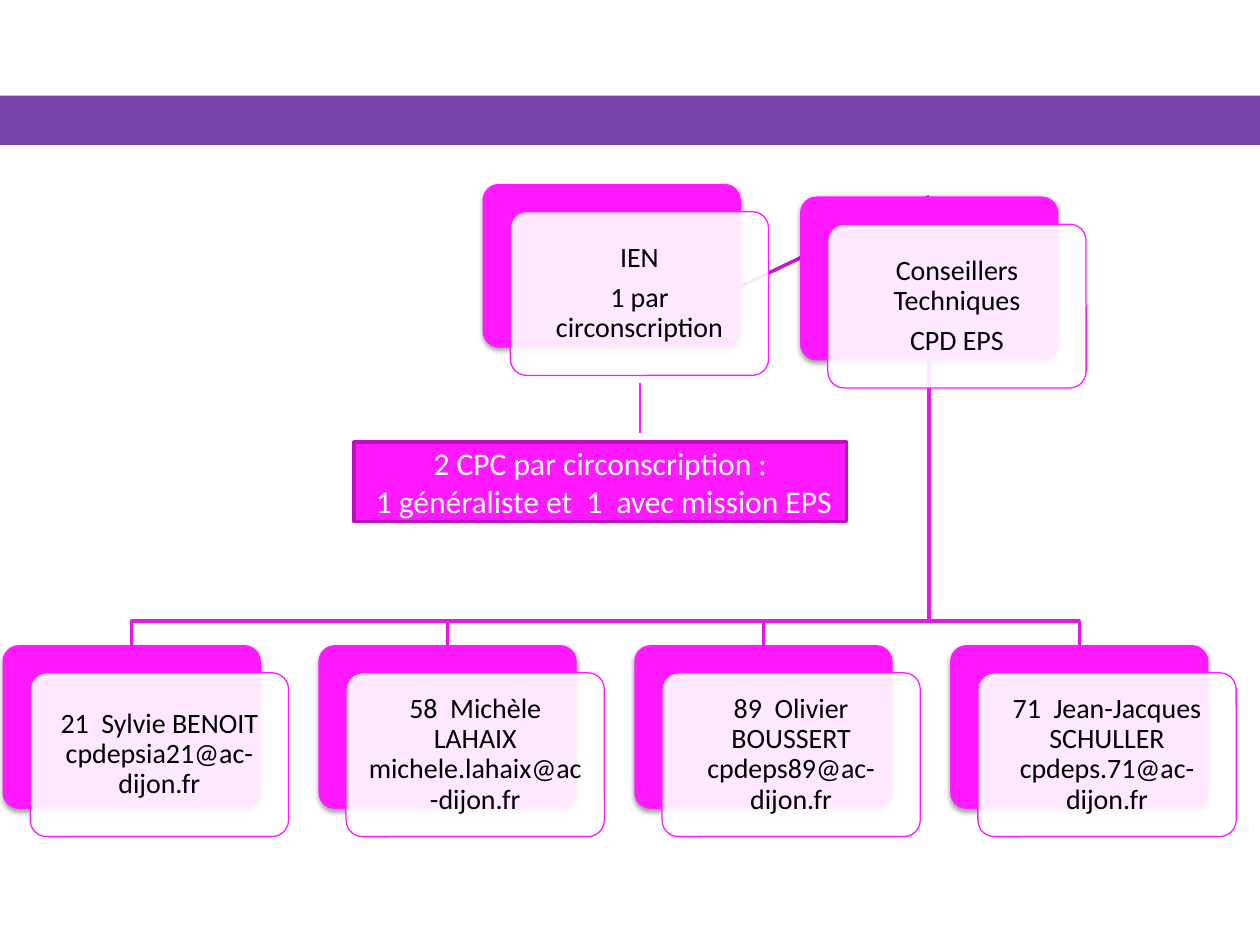
from lxml.etree import SubElement
from pptx import Presentation
from pptx.dml.color import RGBColor
from pptx.enum.shapes import MSO_CONNECTOR, MSO_SHAPE
from pptx.enum.text import MSO_ANCHOR, PP_ALIGN
from pptx.oxml.ns import qn
from pptx.util import Inches, Pt

WIDTH, HEIGHT = 10, 7.5
CARD_WIDTH, CARD_HEIGHT = 2.05, 1.3
CARD_SHIFT = 0.22
COLUMN_LEFT, COLUMN_STEP = 0.02, 2.507
MEMBER_TOP, BUS_TOP = 5.12, 4.93
INSPECTOR_BOX = (3.83, 1.46, CARD_WIDTH, CARD_HEIGHT)
ADVISER_BOX = (6.35, 1.56, CARD_WIDTH, CARD_HEIGHT)
MAGENTA = "FE19FF"
INSPECTOR = ["IEN", "1 par circonscription"]
ADVISER = ["Conseillers Techniques", "CPD EPS"]
MISSION = ["2 CPC par circonscription :", " 1 généraliste et  1  avec mission EPS"]
MEMBERS = [
    "21  Sylvie BENOIT\ncpdepsia21@ac-dijon.fr",
    "58  Michèle LAHAIX\nmichele.lahaix@ac-dijon.fr",
    "89  Olivier BOUSSERT\ncpdeps89@ac-dijon.fr",
    "71  Jean-Jacques SCHULLER\ncpdeps.71@ac-dijon.fr",
]


def colour(value):
    """Turn a hex string into a colour."""
    return RGBColor.from_string(value)


def set_line(shape, value, width):
    """Give a shape or connector a solid line."""
    shape.line.color.rgb = colour(value)
    shape.line.width = Pt(width)


def add_block(page, kind, box, fill, line=None, width=0.75):
    """Add a filled preset shape without a shadow."""
    block = page.shapes.add_shape(kind, *map(Inches, box))
    block.shadow.inherit = False
    block.fill.solid()
    block.fill.fore_color.rgb = colour(fill)
    if line:
        set_line(block, line, width)
    else:
        block.line.fill.background()
    if kind == MSO_SHAPE.ROUNDED_RECTANGLE:
        block.adjustments[0] = 0.1
    return block


def add_shadow(shape):
    """Add a soft shadow below a shape."""
    effects = shape.element.spPr.find(qn("a:effectLst"))
    shadow = SubElement(effects, qn("a:outerShdw"), blurRad=str(Pt(3.1)), dist=str(Pt(1.6)),
                        dir="5400000", rotWithShape="0")
    black = SubElement(shadow, qn("a:srgbClr"), val="000000")
    SubElement(black, qn("a:alpha"), val="38000")


def write(shape, lines, size, value, spacing=None, after=None):
    """Fill a shape with centred paragraphs."""
    frame = shape.text_frame
    frame.word_wrap = True
    frame.vertical_anchor = MSO_ANCHOR.MIDDLE
    for index, line in enumerate(lines):
        para = frame.paragraphs[0] if index == 0 else frame.add_paragraph()
        para.text = line
        para.alignment = PP_ALIGN.CENTER
        para.line_spacing = spacing
        para.space_after = after
        for span in para.runs:
            span.font.name = "Calibri"
            span.font.size = Pt(size)
            span.font.color.rgb = colour(value)
        for line_break in para._p.findall(qn("a:br")):
            SubElement(line_break, qn("a:rPr"), sz=str(size * 100))


def add_card(page, box, lines):
    """Add a magenta plate with a translucent text card in front."""
    left, top, width, height = box
    add_shadow(add_block(page, MSO_SHAPE.ROUNDED_RECTANGLE, box, MAGENTA))
    front_box = (left + CARD_SHIFT, top + CARD_SHIFT, width, height)
    front = add_block(page, MSO_SHAPE.ROUNDED_RECTANGLE, front_box, "FFFFFF", MAGENTA)
    fill = front.element.spPr.find(qn("a:solidFill"))
    SubElement(fill[0], qn("a:alpha"), val="90000")
    frame = front.text_frame
    frame.margin_left = frame.margin_right = Inches(0.11)
    frame.margin_top = frame.margin_bottom = Inches(0.11)
    write(front, lines, 16, "000000", 0.9, Pt(5.6))


def add_path(page, points, value):
    """Draw an open path through the points."""
    start, *others = [(Inches(x), Inches(y)) for x, y in points]
    builder = page.shapes.build_freeform(*start)
    builder.add_line_segments(others, close=False)
    path = builder.convert_to_shape()
    path.shadow.inherit = False
    path.fill.background()
    set_line(path, value, 2)


def add_links(page, lefts):
    """Link the adviser to every member and to the inspector."""
    left, top, width, height = ADVISER_BOX
    trunk = left + width / 2
    for member_left in reversed(lefts):
        middle = member_left + CARD_WIDTH / 2
        add_path(page, [(trunk, top + height), (trunk, BUS_TOP),
                        (middle, BUS_TOP), (middle, MEMBER_TOP)], "E717E7")
    inspector_left, inspector_top, inspector_width, inspector_height = INSPECTOR_BOX
    add_path(page, [(inspector_left + inspector_width / 2, inspector_top + inspector_height),
                    (trunk, top)], "CB14CC")


def add_mission(page, box):
    """Add the mission box and the short line above it."""
    stem = page.shapes.add_connector(
        MSO_CONNECTOR.STRAIGHT, *map(Inches, (5.08, 3.04, 5.08, 3.44)))
    set_line(stem, "FE13FF", 0.75)
    SubElement(stem.element.spPr, qn("a:effectLst"))
    mission = add_block(page, MSO_SHAPE.RECTANGLE, box, MAGENTA, "BC12BD", 2)
    write(mission, MISSION, 18, "FFFFFF")


def main():
    """Build and save the slide."""
    deck = Presentation()
    deck.slide_width, deck.slide_height = Inches(WIDTH), Inches(HEIGHT)
    page = deck.slides.add_slide(deck.slide_layouts[6])
    add_block(page, MSO_SHAPE.RECTANGLE, (0, 0.76, WIDTH, 0.39), "7545A9")
    lefts = [COLUMN_LEFT + COLUMN_STEP * column for column in range(len(MEMBERS))]
    add_links(page, lefts)
    add_card(page, INSPECTOR_BOX, INSPECTOR)
    add_card(page, ADVISER_BOX, ADVISER)
    for left, member in zip(lefts, MEMBERS):
        add_card(page, (left, MEMBER_TOP, CARD_WIDTH, CARD_HEIGHT), [member])
    add_mission(page, (2.81, 3.51, 3.91, 0.63))
    deck.save("out.pptx")


if __name__ == "__main__":
    main()
